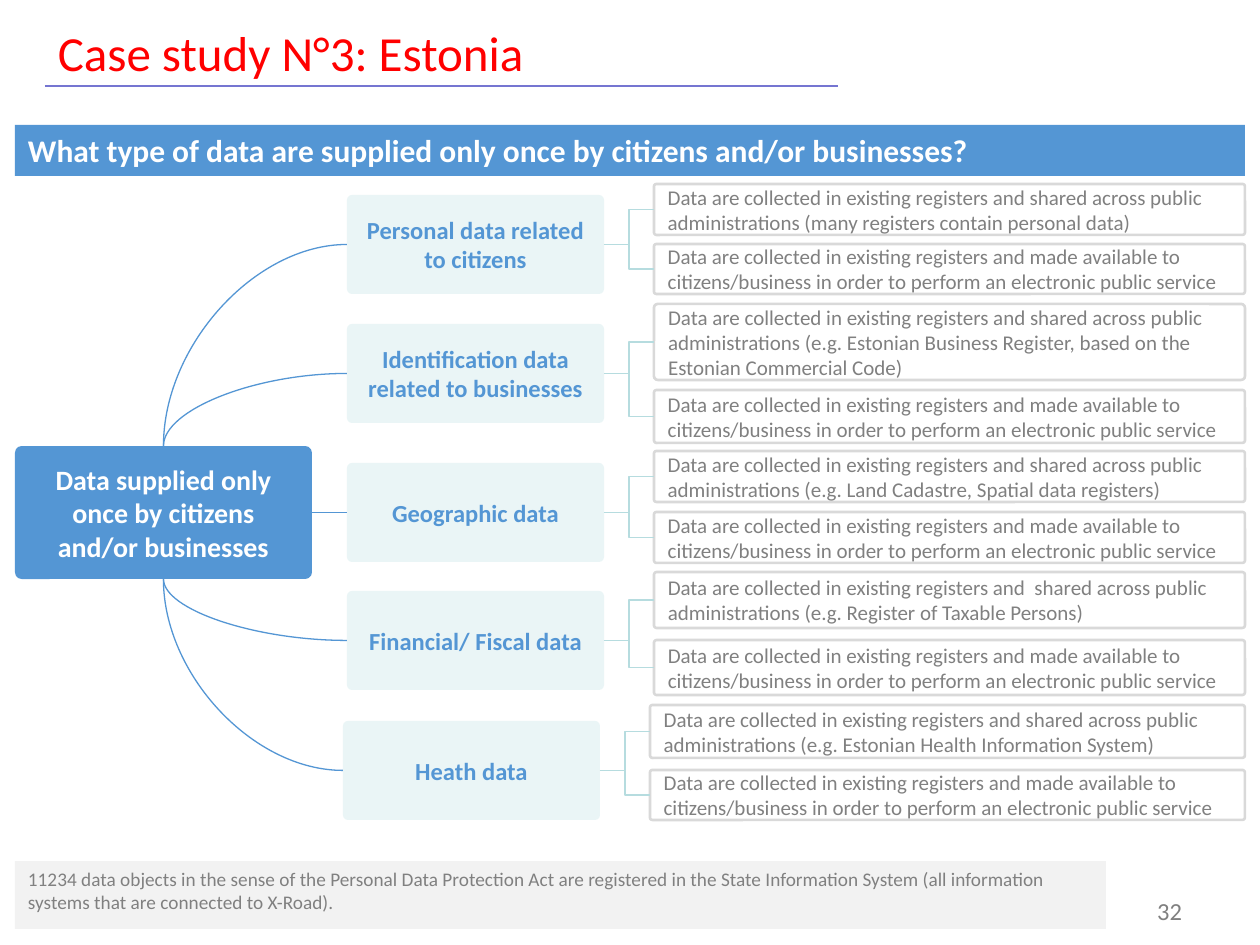
from lxml import etree
from pptx import Presentation
from pptx.dml.color import RGBColor
from pptx.enum import shapes, text
from pptx.oxml.ns import qn
from pptx import util as u

EMU_PER_PX = 914400 / 126
BLUE, PALE, RED, WHITE = "5496D4", "EAF5F6", "FF0000", "FFFFFF"
GREY, LIGHT, BORDER, TEAL = "808080", "F2F2F2", "D9D9D9", "B6DCDF"
TOP, LEFT, BOTTOM, RIGHT = range(4)

SHARED = "Data are collected in existing registers and shared across public administrations "
AVAILABLE = ("Data are collected in existing registers and made available to "
             "citizens/business in order to perform an electronic public service")

# topic, topic top, shift left, then (text, top, height) of its two details
BRANCHES = [
    ("Personal data related to citizens", 195, 0,
     [(SHARED + "(many registers contain personal data)", 184, 51),
      (AVAILABLE, 244, 50)]),
    ("Identification data related to businesses", 324, 0,
     [(SHARED + "(e.g. Estonian Business Register, based on the Estonian "
       "Commercial Code)", 304, 76),
      (AVAILABLE, 390, 53)]),
    ("Geographic data", 463, 0,
     [(SHARED + "(e.g. Land Cadastre, Spatial data registers)", 451, 51),
      (AVAILABLE, 512, 51)]),
    ("Financial/ Fiscal data", 591, 0,
     [(SHARED.replace("and shared", "and  shared")
       + "(e.g. Register of Taxable Persons)", 572, 56),
      (AVAILABLE, 640, 55)]),
    ("Heath data", 721, 4,
     [(SHARED + "(e.g. Estonian Health Information System)", 705, 53),
      (AVAILABLE, 770, 50)]),
]


def px(n):
    return u.Emu(round(n * EMU_PER_PX))


def rgb(value):
    return RGBColor.from_string(value)


class Deck:
    font = "Calibri"
    corner = 0.05

    def __init__(self, width, height):
        self.prs = Presentation()
        self.prs.slide_width, self.prs.slide_height = px(width), px(height)
        self.slide = self.prs.slides.add_slide(self.prs.slide_layouts[6])

    def set_text(self, sp, words, size, color, bold=False, align="LEFT",
                 anchor="TOP", pad=6):
        tf = sp.text_frame
        tf.word_wrap = True
        tf.margin_left = tf.margin_right = px(13)
        tf.margin_top = tf.margin_bottom = px(pad)
        tf.vertical_anchor = text.MSO_ANCHOR[anchor]
        tf.text = words
        p = tf.paragraphs[0]
        p.alignment = text.PP_ALIGN[align]
        font = p.runs[0].font
        font.name, font.size, font.bold = self.font, u.Pt(size), bold
        font.color.rgb = rgb(color)

    def label(self, box, words, size, color, **style):
        sp = self.slide.shapes.add_textbox(*map(px, box))
        self.set_text(sp, words, size, color, **style)

    def panel(self, box, words, size, color, fill=None, border=None,
              rounded=False, **style):
        kind = shapes.MSO_SHAPE.ROUNDED_RECTANGLE if rounded else shapes.MSO_SHAPE.RECTANGLE
        sp = self.slide.shapes.add_shape(kind, *map(px, box))
        sp.shadow.inherit = False
        if rounded:
            sp.adjustments[0] = self.corner
        if fill:
            sp.fill.solid()
            sp.fill.fore_color.rgb = rgb(fill)
        else:
            sp.fill.background()
        if border:
            sp.line.color.rgb = rgb(border)
            sp.line.width = u.Pt(1.5)
        else:
            sp.line.fill.background()
        self.set_text(sp, words, size, color, **style)
        return sp

    def node(self, box, words, size, color, **style):
        """Rounded box of the tree, with its text in the middle."""
        return self.panel(box, words, size, color, rounded=True,
                          anchor="MIDDLE", pad=10, **style)

    def line(self, color, kind="STRAIGHT", ends=(0, 0, 0, 0)):
        connector = self.slide.shapes.add_connector(
            shapes.MSO_CONNECTOR[kind], *map(px, ends))
        connector.line.color.rgb = rgb(color)
        connector.line.width = u.Pt(0.75)
        etree.SubElement(connector._element.spPr, qn("a:effectLst"))
        return connector

    def link(self, start, start_side, end, end_side, color, kind="STRAIGHT"):
        connector = self.line(color, kind)
        connector.begin_connect(start, start_side)
        connector.end_connect(end, end_side)
        if kind == "CURVE":  # one quarter turn instead of an S
            geometry = connector._element.spPr.find(qn("a:prstGeom"))
            geometry.set("prst", "curvedConnector2")


def main():
    deck = Deck(1260, 945)
    deck.line("7575D1", ends=(45, 86, 838, 86))
    deck.label((45, 17, 793, 69), "Case study N°3: Estonia", 28, RED, anchor="MIDDLE")
    deck.panel((15, 125, 1230, 51),
               "What type of data are supplied only once by citizens and/or businesses?",
               18, WHITE, fill=BLUE, bold=True)

    root = deck.node((15, 446, 297, 133),
                     "Data supplied only once by citizens and/or businesses",
                     16, WHITE, fill=BLUE, bold=True, align="CENTER")
    middle = len(BRANCHES) // 2
    for i, (name, top, shift, details) in enumerate(BRANCHES):
        topic = deck.node((347 - shift, top, 257, 99), name, 14, BLUE,
                          fill=PALE, bold=True, align="CENTER")
        if i == middle:
            deck.link(root, RIGHT, topic, LEFT, BLUE)
        else:
            deck.link(topic, LEFT, root, TOP if i < middle else BOTTOM, BLUE, "CURVE")
        for words, detail_top, height in details:
            detail = deck.node((654 - shift, detail_top, 591 + shift, height),
                               words, 12, GREY, border=BORDER)
            deck.link(topic, RIGHT, detail, LEFT, TEAL, "ELBOW")

    deck.panel((15, 861, 1091, 68),
               "11234 data objects in the sense of the Personal Data Protection Act are "
               "registered in the State Information System (all information systems that "
               "are connected to X-Road).", 11, GREY, fill=LIGHT)
    deck.panel((1138, 890, 57, 55), "32", 14, GREY, fill=WHITE, align="RIGHT")
    deck.prs.save("out.pptx")


if __name__ == "__main__":
    main()
